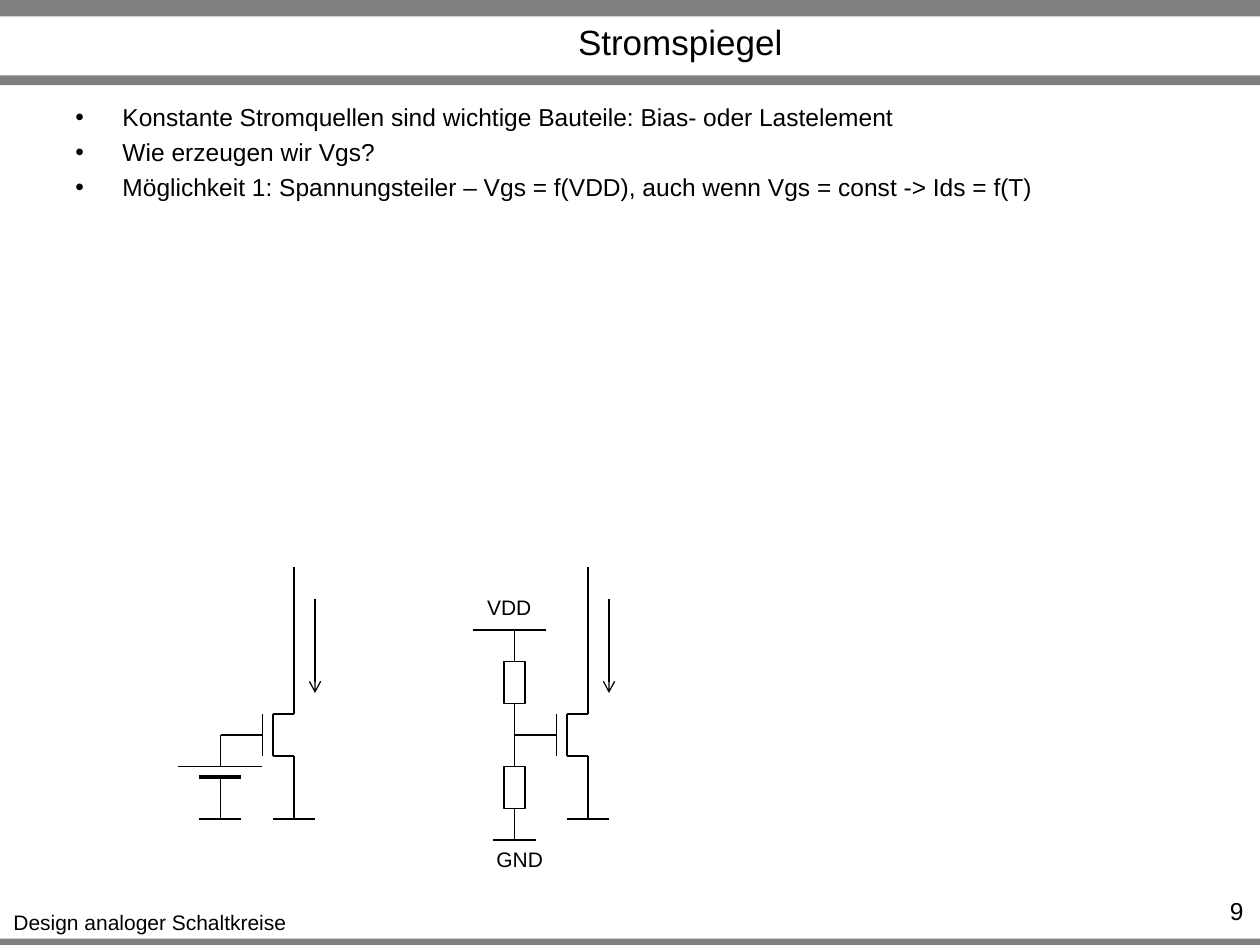
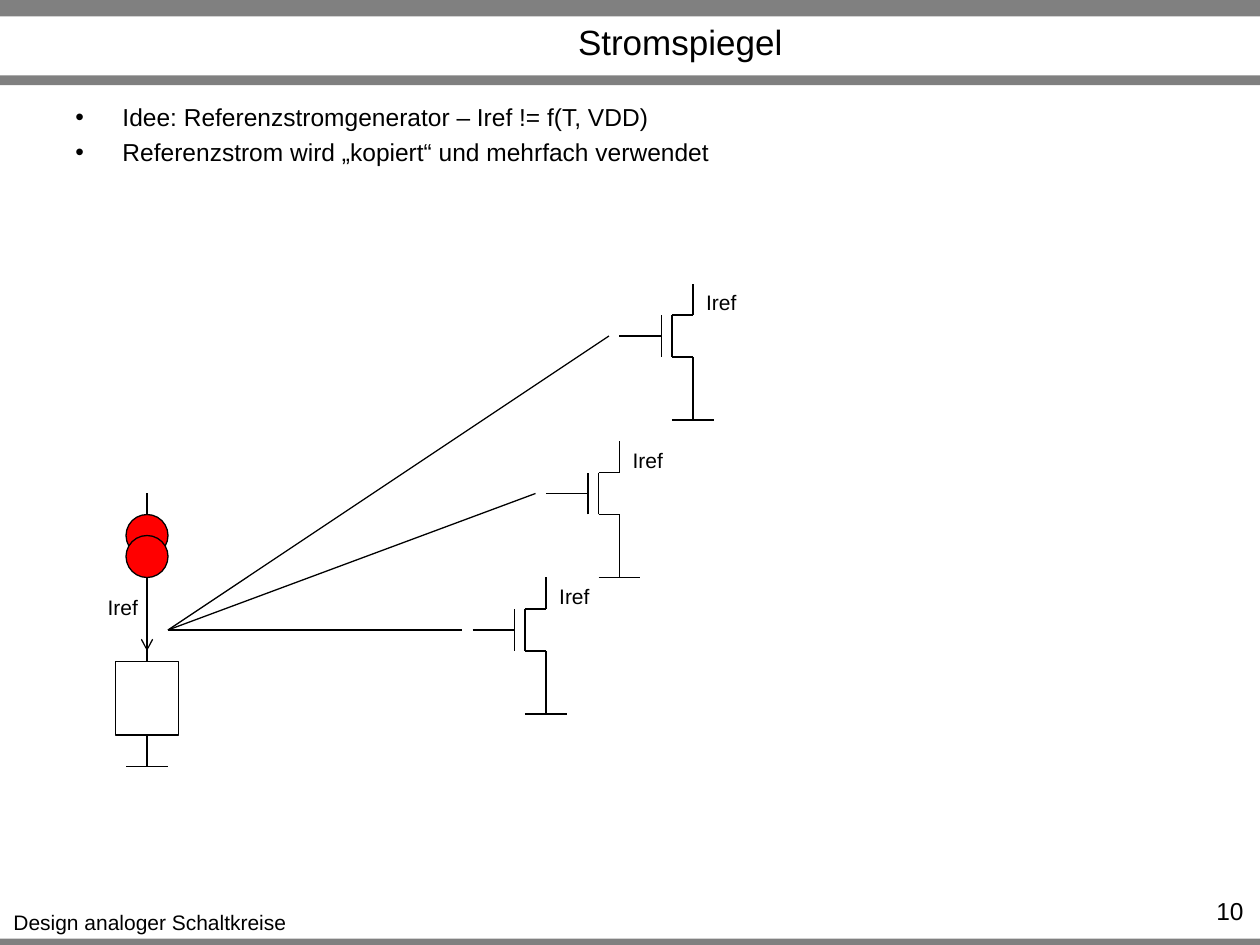
"""Build two lecture slides on current mirrors with circuit sketches."""
from dataclasses import dataclass

from lxml import etree
from pptx import Presentation
from pptx.dml.color import RGBColor
from pptx.enum.shapes import MSO_CONNECTOR, MSO_SHAPE
from pptx.enum.text import MSO_ANCHOR, MSO_AUTO_SIZE, PP_ALIGN
from pptx.oxml.ns import qn
from pptx.presentation import Presentation as Deck
from pptx.shapes.autoshape import Shape
from pptx.shapes.connector import Connector
from pptx.shapes.shapetree import GroupShapes, SlideShapes
from pptx.slide import Slide
from pptx.text.text import TextFrame
from pptx.util import Cm, Length, Pt

LINE = MSO_CONNECTOR.STRAIGHT
RECT, OVAL = MSO_SHAPE.RECTANGLE, MSO_SHAPE.OVAL
LEFT, MID, RIGHT = PP_ALIGN.LEFT, PP_ALIGN.CENTER, PP_ALIGN.RIGHT
BLACK, GRAY, RED = "000000", "808080", "FF0000"
FONT = "Arial"
STEP = 2.54 / 12
INDENT = Cm(0.95)
TITLE = "Stromspiegel"
FOOTER = "Design analoger Schaltkreise"

Shapes = SlideShapes | GroupShapes


@dataclass(frozen=True)
class Box:
    left: float
    top: float
    width: float
    height: float

    def cm(self) -> tuple[Length, Length, Length, Length]:
        return Cm(self.left), Cm(self.top), Cm(self.width), Cm(self.height)


@dataclass(frozen=True)
class Wire:
    x: float
    y: float
    to_x: float
    to_y: float
    width: float = 0.75
    arrow: bool = False


@dataclass(frozen=True)
class Block:
    x: float
    top: float
    lead: float
    width: float
    height: float
    tail: float = 3


@dataclass(frozen=True)
class Label:
    text: str
    x: float
    y: float
    width: float = 5.4


@dataclass(frozen=True)
class Gate:
    x: float
    y: float


BANDS = (Box(0, 18.92, 25.4, 0.2), Box(0, 0, 25.4, 0.33), Box(0, 1.52, 25.4, 0.2))
FOOT_BOX = Box(0, 18.21, 6.05, 0.76)
HEAD_BOX = Box(3.3, 0.36, 20.83, 0.97)
BODY_BOX = Box(1.27, 1.93, 22.86, 2.31)
PAGE_BOX = Box(23.11, 17.93, 2.21, 0.61)


def color(code: str) -> RGBColor:
    return RGBColor.from_string(code)


def grid(left: float, top: float, width: float, height: float) -> Box:
    return Box(left * STEP, top * STEP, width * STEP, height * STEP)


def style(frame: TextFrame, size: float, align: PP_ALIGN) -> None:
    for para in frame.paragraphs:
        para.alignment = align
        for run in para.runs:
            run.font.name, run.font.size = FONT, Pt(size)
            run.font.color.rgb = color(BLACK)


def write(shapes: Shapes, box: Box, text: str, size: float, align: PP_ALIGN,
          wrap: bool = True) -> TextFrame:
    frame = shapes.add_textbox(*box.cm()).text_frame
    frame.word_wrap = wrap
    frame.text = text
    style(frame, size, align)
    return frame


def form(shapes: Shapes, kind: MSO_SHAPE, box: Box, fill: str = "",
         edge: bool = True) -> Shape:
    shape = shapes.add_shape(kind, *box.cm())
    shape.shadow.inherit = False
    if fill:
        shape.fill.solid()
        shape.fill.fore_color.rgb = color(fill)
    else:
        shape.fill.background()
    if edge:
        shape.line.color.rgb = color(BLACK)
        shape.line.width = Pt(0.75)
    else:
        shape.line.fill.background()
    return shape


def draw(shapes: Shapes, wire: Wire) -> Connector:
    ends = [Cm(n * STEP) for n in (wire.x, wire.y, wire.to_x, wire.to_y)]
    link = shapes.add_connector(LINE, *ends)
    link.line.color.rgb = color(BLACK)
    link.line.width = Pt(wire.width)
    props = link.element.spPr
    if wire.arrow:
        etree.SubElement(props.find(qn("a:ln")), qn("a:tailEnd"), type="arrow")
    etree.SubElement(props, qn("a:effectLst"))
    return link


def place(shapes: Shapes, block: Block) -> None:
    x, top = block.x, block.top + block.lead
    end = top + block.height
    rect = form(shapes, RECT, grid(x - block.width / 2, top, block.width, block.height))
    draw(shapes, Wire(x, block.top, x, top)).end_connect(rect, 0)
    draw(shapes, Wire(x, end, x, end + block.tail)).begin_connect(rect, 2)


def ground(shapes: Shapes, x: float, y: float) -> None:
    draw(shapes, Wire(x - 2, y, x + 2, y))


def label(shapes: Shapes, note: Label) -> None:
    box = grid(note.x, note.y, note.width, 3.6)
    write(shapes, box, note.text, 12, MID, False)


def switch(slide: Slide, gate: Gate) -> None:
    x, y = gate.x, gate.y
    plate, body, pole = x + 4, x + 5, x + 7
    part = slide.shapes.add_group_shape().shapes
    for wire in (
        Wire(x, y, x + 2, y),
        Wire(x + 2, y, plate, y),
        Wire(plate, y + 2, plate, y - 2),
        Wire(body, y + 2, body, y - 2),
    ):
        draw(part, wire)
    for sign in (-1, 1):
        draw(part, Wire(body, y + 2 * sign, pole, y + 2 * sign))
        draw(part, Wire(pole, y + 2 * sign, pole, y + 5 * sign))
    draw(slide.shapes, Wire(pole, y + 5, pole, y + 8))
    ground(slide.shapes, pole, y + 8)


def drain(shapes: Shapes, gate: Gate) -> None:
    x, y = gate.x, gate.y
    draw(shapes, Wire(x + 7, y - 16, x + 7, y - 5))
    draw(shapes, Wire(x + 9, y - 13, x + 9, y - 4, arrow=True))


def cell(slide: Slide, gate: Gate) -> None:
    x, y = gate.x, gate.y
    part = slide.shapes.add_group_shape().shapes
    draw(part, Wire(x, y, x, y + 3))
    draw(part, Wire(x - 4, y + 3, x + 4, y + 3))
    draw(part, Wire(x - 2, y + 4, x + 2, y + 4, width=2))
    draw(part, Wire(x, y + 4, x, y + 8))
    ground(part, x, y + 8)


def source(slide: Slide, x: float, y: float) -> None:
    part = slide.shapes.add_group_shape().shapes
    draw(part, Wire(x, y, x, y + 2))
    for top in (y + 2, y + 4):
        form(part, OVAL, grid(x - 2, top, 4, 4), RED)
    draw(part, Wire(x, y + 8, x, y + 10))


def bullets(slide: Slide, lines: list[str]) -> None:
    frame = write(slide.shapes, BODY_BOX, "\n".join(lines), 14, LEFT)
    for rank, para in enumerate(frame.paragraphs):
        props = para._p.get_or_add_pPr()
        props.set("marL", str(INDENT))
        props.set("indent", str(-INDENT))
        etree.SubElement(props, qn("a:buFont"), typeface=FONT)
        etree.SubElement(props, qn("a:buChar"), char="•")
        if rank:
            para.space_before = Pt(3.2)


def start(deck: Deck, page: int, lines: list[str]) -> Slide:
    slide = deck.slides.add_slide(deck.slide_layouts[5])
    for band in BANDS:
        form(slide.shapes, RECT, band, GRAY, edge=False)
    write(slide.shapes, FOOT_BOX, FOOTER, 12, MID, False)
    head = slide.shapes.title
    head.left, head.top, head.width, head.height = HEAD_BOX.cm()
    frame = head.text_frame
    frame.text = TITLE
    frame.auto_size = MSO_AUTO_SIZE.NONE
    frame.vertical_anchor = MSO_ANCHOR.MIDDLE
    style(frame, 20, MID)
    bullets(slide, lines)
    write(slide.shapes, PAGE_BOX, str(page), 14, RIGHT)
    return slide


def bias(deck: Deck) -> None:
    slide = start(deck, 9, [
        "Konstante Stromquellen sind wichtige Bauteile: Bias- oder Lastelement",
        "Wie erzeugen wir Vgs?",
        "Möglichkeit 1: Spannungsteiler – Vgs = f(VDD), auch wenn Vgs = const -> Ids = f(T)",
    ])
    shapes = slide.shapes
    fixed, split = Gate(21, 70), Gate(49, 70)
    for gate in (fixed, split):
        switch(slide, gate)
        drain(shapes, gate)
    cell(slide, fixed)
    for top in (split.y - 10, split.y):
        part = shapes.add_group_shape().shapes
        place(part, Block(split.x, top, 3, 2, 4))
    draw(shapes, Wire(45, 60, 52, 60))
    ground(shapes, split.x, 80)
    label(shapes, Label("GND", 46, 80, 7))
    label(shapes, Label("VDD", 45, 56, 7))


def mirror(deck: Deck) -> None:
    slide = start(deck, 10, [
        "Idee: Referenzstromgenerator – Iref != f(T, VDD)",
        "Referenzstrom wird „kopiert“ und mehrfach verwendet",
    ])
    shapes = slide.shapes
    source(slide, 14, 47)
    place(shapes, Block(14, 57, 6, 6, 7))
    draw(shapes, Wire(14, 60, 14, 62, arrow=True))
    ground(shapes, 14, 73)
    label(shapes, Label("Iref", 9, 56))
    for gate in (Gate(45, 60), Gate(52, 47), Gate(59, 32)):
        switch(slide, gate)
        draw(shapes, Wire(16, 60, gate.x - 1, gate.y))
        label(shapes, Label("Iref", gate.x + 7, gate.y - 5))


def main() -> None:
    deck = Presentation()
    deck.slide_width, deck.slide_height = Cm(25.4), Cm(19.05)
    bias(deck)
    mirror(deck)
    deck.save("out.pptx")


if __name__ == "__main__":
    main()
